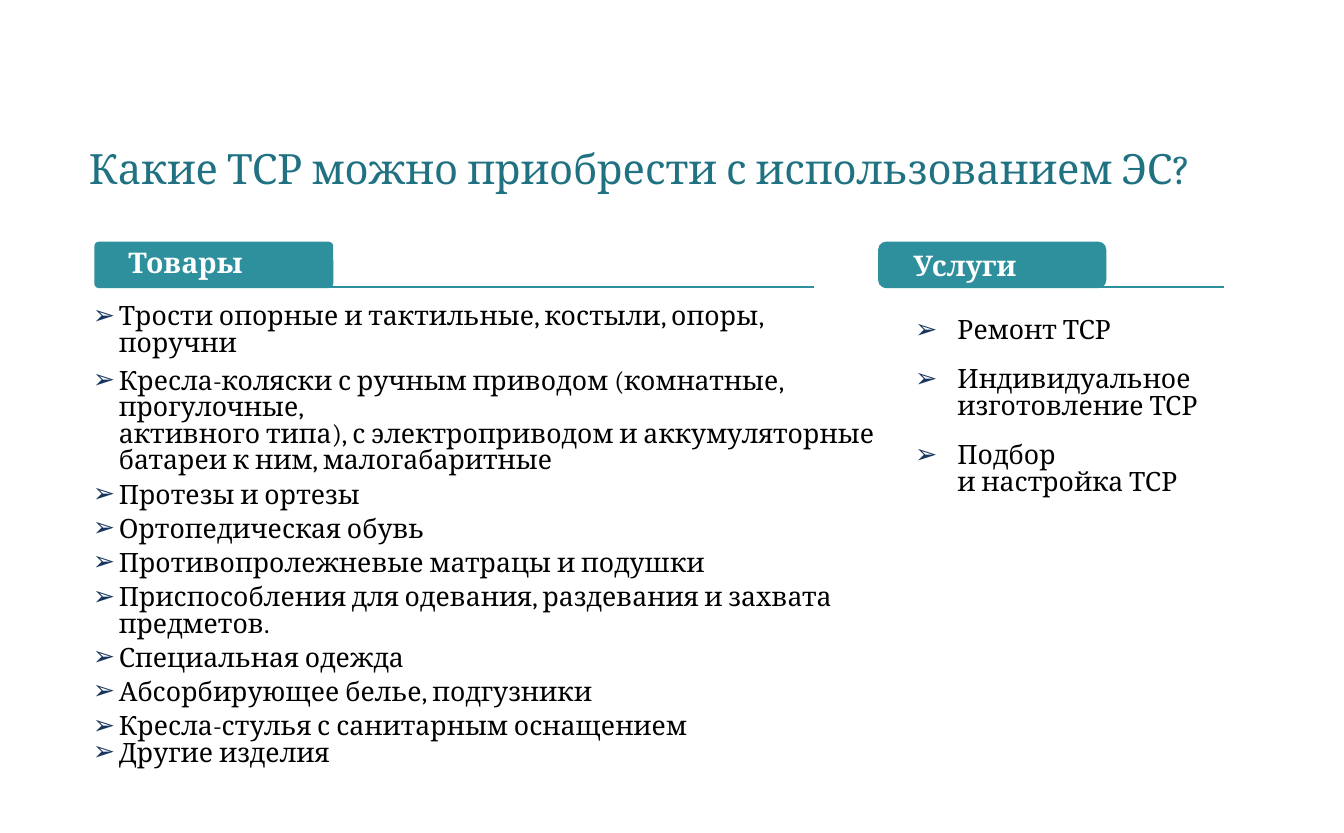
from lxml import etree
from pptx import Presentation
from pptx.dml.color import RGBColor
from pptx.enum.shapes import MSO_CONNECTOR, MSO_SHAPE
from pptx.enum.text import MSO_ANCHOR, MSO_AUTO_SIZE, PP_ALIGN
from pptx.oxml.ns import qn
from pptx.util import Inches, Pt

ROUNDED = MSO_SHAPE.ROUNDED_RECTANGLE
STRAIGHT = MSO_CONNECTOR.STRAIGHT
TOP, MIDDLE, BOTTOM = MSO_ANCHOR.TOP, MSO_ANCHOR.MIDDLE, MSO_ANCHOR.BOTTOM
NO_AUTOFIT = MSO_AUTO_SIZE.NONE
LEFT = PP_ALIGN.LEFT

FONT = "Cambria"
COLORS = {
    "title": "207282",
    "accent": "2F909D",
    "bullet": "17365D",
    "text": "000000",
    "heading": "FFFFFF",
}

GOODS = [
    ("Трости опорные и тактильные, костыли, опоры, поручни", 0),
    ("Кресла-коляски с ручным приводом (комнатные, прогулочные,\n"
     "активного типа), с электроприводом и аккумуляторные "
     "батареи к ним, малогабаритные", 6),
    ("Протезы и ортезы", 4),
    ("Ортопедическая обувь", 4),
    ("Противопролежневые матрацы и подушки", 4),
    ("Приспособления для одевания, раздевания и захвата предметов.", 4),
    ("Специальная одежда", 4),
    ("Абсорбирующее белье, подгузники", 4),
    ("Кресла-стулья с санитарным оснащением", 4),
    ("Другие изделия", 0),
]
SERVICES = [
    ("Ремонт ТСР", 0),
    ("Индивидуальное\nизготовление ТСР", 12),
    ("Подбор\nи настройка ТСР", 12),
]


def rgb(name):
    return RGBColor.from_string(COLORS[name])


def place(shape, left, top, width, height):
    shape.left, shape.top = Inches(left), Inches(top)
    shape.width, shape.height = Inches(width), Inches(height)


def set_frame(frame, anchor, left, top, right, bottom):
    frame.word_wrap = True
    frame.auto_size = NO_AUTOFIT
    frame.vertical_anchor = anchor
    frame.margin_left, frame.margin_top = Inches(left), Inches(top)
    frame.margin_right, frame.margin_bottom = Inches(right), Inches(bottom)


def add_text(paragraph, text, size, color, bold=False):
    paragraph.alignment = LEFT
    for number, line in enumerate(text.split("\n")):
        if number:
            paragraph.add_line_break()
        run = paragraph.add_run()
        run.text = line
        run.font.name = FONT
        run.font.size = Pt(size)
        run.font.bold = bold
        run.font.color.rgb = rgb(color)


def set_bullet(paragraph, indent):
    properties = paragraph._p.get_or_add_pPr()
    properties.set("marL", str(Inches(indent)))
    properties.set("indent", str(-Inches(indent)))
    bullet_color = etree.SubElement(properties, qn("a:buClr"))
    etree.SubElement(bullet_color, qn("a:srgbClr"), val=COLORS["bullet"])
    etree.SubElement(properties, qn("a:buChar"), char="➢")


def fill_title(title, text):
    place(title, 0.55, 0.73, 8.86, 0.68)
    set_frame(title.text_frame, BOTTOM, 0.1, 0, 0.1, 0)
    paragraph = title.text_frame.paragraphs[0]
    paragraph.line_spacing = Pt(30)
    add_text(paragraph, text, 22, "title")


def fill_list(body, box, items, indent):
    place(body, *box)
    frame = body.text_frame
    set_frame(frame, TOP, 0.1, 0, 0.1, 0.05)
    for number, (text, gap) in enumerate(items):
        paragraph = frame.add_paragraph() if number else frame.paragraphs[0]
        paragraph.line_spacing = Pt(14)
        paragraph.space_before = Pt(gap)
        paragraph.space_after = Pt(0)
        set_bullet(paragraph, indent)
        add_text(paragraph, text, 14, "text")


def add_rule(slide, start, end):
    y = Inches(2.1)
    rule = slide.shapes.add_connector(STRAIGHT, Inches(start), y, Inches(end), y)
    rule.line.color.rgb = rgb("accent")
    rule.line.width = Pt(1)
    etree.SubElement(rule._element.spPr, qn("a:effectLst"))


def add_heading(slide, text, left, width, rounding, line_spacing):
    tab = slide.shapes.add_shape(
        ROUNDED, Inches(left), Inches(1.77), Inches(width), Inches(0.34))
    tab.adjustments[0] = rounding
    tab.shadow.inherit = False
    tab.fill.solid()
    tab.fill.fore_color.rgb = rgb("accent")
    tab.line.fill.background()
    set_frame(tab.text_frame, MIDDLE, 0.24, 0.05, 0.1, 0.05)
    paragraph = tab.text_frame.paragraphs[0]
    paragraph.line_spacing = line_spacing
    add_text(paragraph, text, 15, "heading", bold=True)


def main():
    deck = Presentation()
    deck.slide_width, deck.slide_height = Inches(9.84), Inches(6.1)
    slide = deck.slides.add_slide(deck.slide_layouts.get_by_name("Two Content"))
    title, goods, services = slide.placeholders

    fill_title(title, "Какие ТСР можно приобрести с использованием ЭС?")
    fill_list(goods, (0.58, 2.23, 5.95, 3.52), GOODS, 0.19)
    fill_list(services, (6.6, 2.33, 3.14, 3.3), SERVICES, 0.31)
    add_rule(slide, 0.76, 5.96)
    add_rule(slide, 6.47, 8.96)
    add_heading(slide, "Товары", 0.69, 1.75, 0.1, 0.8)
    add_heading(slide, "Услуги", 6.43, 1.67, 0.17, 1.0)

    deck.save("out.pptx")


if __name__ == "__main__":
    main()
